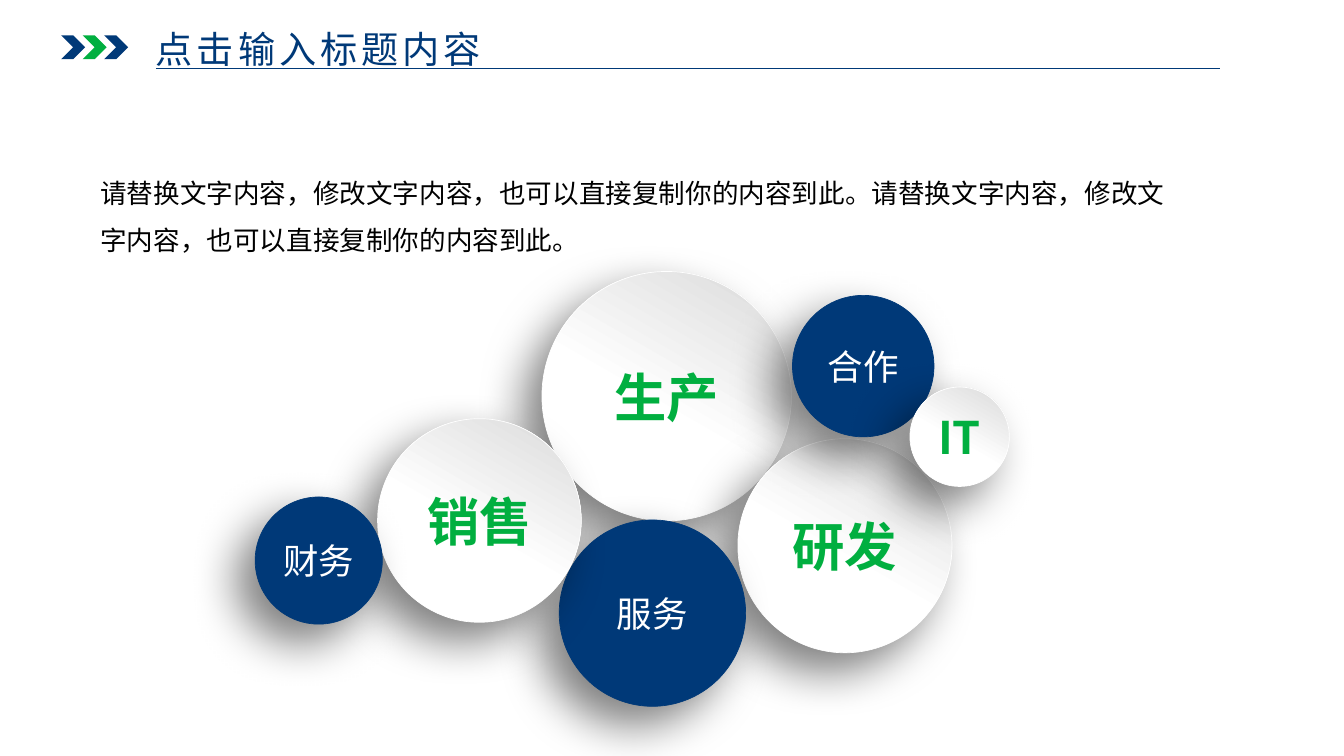
from lxml.etree import SubElement
from pptx import Presentation
from pptx.dml.color import RGBColor
from pptx.enum.shapes import MSO_CONNECTOR as Connector, MSO_SHAPE as Shape
from pptx.enum.text import MSO_ANCHOR as Anchor, MSO_AUTO_SIZE as AutoSize, PP_ALIGN as Align
from pptx.oxml.ns import qn
from pptx.util import Pt

NAVY = RGBColor(0x00, 0x39, 0x78)
GREEN = RGBColor(0x01, 0xAF, 0x40)
WHITE = RGBColor(0xFF, 0xFF, 0xFF)
GREY = RGBColor(0xD9, 0xD9, 0xD9)
BLACK = RGBColor(0x00, 0x00, 0x00)
FONT = "Noto Sans CJK SC"

# Content
TITLE = "点击输入标题内容"
INTRO = ("请替换文字内容，修改文字内容，也可以直接复制你的内容到此。"
         "请替换文字内容，修改文字内容，也可以直接复制你的内容到此。")
# Department, left, top, diameter, text size, is it navy; back to front
DEPARTMENTS = [
    ("生产", 408.2, 204.5, 187.9, 39.4, False),
    ("研发", 555.8, 330.5, 161.3, 39.4, False),
    ("服务", 421.2, 391.7, 140.4, 26.7, True),
    ("销售", 284.4, 315.4, 153.4, 39.4, False),
    ("合作", 596.9, 222.5, 106.6, 26.7, True),
    ("财务", 192.2, 374.4, 95.8, 26.7, True),
    ("IT", 685.4, 291.6, 74.9, 33.8, False),
]
CHEVRON_COLOURS = [NAVY, GREEN, NAVY]
CHEVRON_LEFT, CHEVRON_TOP, CHEVRON_SIZE, CHEVRON_STEP = 46.1, 26.6, 18, 16.2
RULE_LEFT, RULE_RIGHT, RULE_TOP = 117.4, 918.7, 51.8


def write(frame, text, size, colour, align, bold=False):
    frame.text = text
    paragraph = frame.paragraphs[0]
    paragraph.alignment = align
    paragraph.space_before = Pt(0)
    run = paragraph.runs[0]
    run.font.size, run.font.bold = Pt(size), bold
    run.font.color.rgb = colour
    run.font.name = FONT
    properties = run._r.get_or_add_rPr()
    SubElement(properties, qn("a:ea"), typeface=FONT)
    return paragraph, properties


def place(holder, left, top, width, height, inset_x, inset_y):
    holder.left, holder.top, holder.width, holder.height = map(Pt, (left, top, width, height))
    frame = holder.text_frame
    frame.word_wrap = True
    frame.auto_size = AutoSize.NONE
    frame.vertical_anchor = Anchor.TOP
    frame.margin_left = frame.margin_right = Pt(inset_x)
    frame.margin_top = frame.margin_bottom = Pt(inset_y)
    return frame


def cast_shadow(shape):
    effects = SubElement(shape._element.spPr, qn("a:effectLst"))
    shadow = SubElement(effects, qn("a:outerShdw"), blurRad=str(Pt(35)), dist=str(Pt(20)),
                        dir=str(135 * 60000), algn="tr", rotWithShape="0")
    colour = SubElement(shadow, qn("a:srgbClr"), val=str(BLACK))
    SubElement(colour, qn("a:alpha"), val="50000")


def add_department(shapes, name, left, top, diameter, size, navy):
    circle = shapes.add_shape(Shape.OVAL, Pt(left), Pt(top), Pt(diameter), Pt(diameter))
    if navy:
        circle.fill.solid()
        circle.fill.fore_color.rgb = NAVY
    else:
        circle.fill.gradient()
        circle.fill.gradient_angle = 60
        for stop, position, colour in zip(circle.fill.gradient_stops, (0.45, 1), (WHITE, GREY)):
            stop.position = position
            stop.color.rgb = colour
    circle.line.color.rgb = NAVY if navy else WHITE
    circle.line.width = Pt(0.5)
    cast_shadow(circle)
    circle.text_frame.word_wrap = True
    circle.text_frame.vertical_anchor = Anchor.MIDDLE
    write(circle.text_frame, name, size, WHITE if navy else GREEN, Align.CENTER, not navy)


def main():
    deck = Presentation()
    deck.slide_width, deck.slide_height = Pt(1012.3), Pt(569.5)
    slide = deck.slides.add_slide(deck.slide_layouts[1])
    title, intro = slide.placeholders

    # Title
    heading = place(title, 111.6, 16.6, 308.9, 39.6, 5.8, 2.9)
    _, properties = write(heading, TITLE, 28, NAVY, Align.LEFT)
    properties.set("spc", "300")

    # Introduction, without a bullet
    body = place(intro, 67.7, 117.4, 834.5, 76.3, 7.9, 3.6)
    paragraph, _ = write(body, INTRO, 20, BLACK, Align.LEFT)
    paragraph.line_spacing = 1.5
    layout = paragraph._p.get_or_add_pPr()
    layout.set("marL", "0")
    layout.set("indent", "0")
    SubElement(layout, qn("a:buNone"))

    # Department circles
    for department in DEPARTMENTS:
        add_department(slide.shapes, *department)

    # Chevrons beside the title
    chevrons = slide.shapes.add_group_shape()
    for index, colour in enumerate(CHEVRON_COLOURS):
        chevron = chevrons.shapes.add_shape(
            Shape.CHEVRON, Pt(CHEVRON_LEFT + index * CHEVRON_STEP), Pt(CHEVRON_TOP),
            Pt(CHEVRON_SIZE), Pt(CHEVRON_SIZE))
        chevron.shadow.inherit = False
        chevron.fill.solid()
        chevron.fill.fore_color.rgb = colour
        chevron.line.fill.background()

    # Rule under the title
    rule = slide.shapes.add_connector(Connector.STRAIGHT, Pt(RULE_LEFT), Pt(RULE_TOP),
                                      Pt(RULE_RIGHT), Pt(RULE_TOP))
    rule.line.color.rgb = NAVY
    rule.line.width = Pt(0.5)
    SubElement(rule._element.spPr, qn("a:effectLst"))

    deck.save("out.pptx")


if __name__ == "__main__":
    main()
